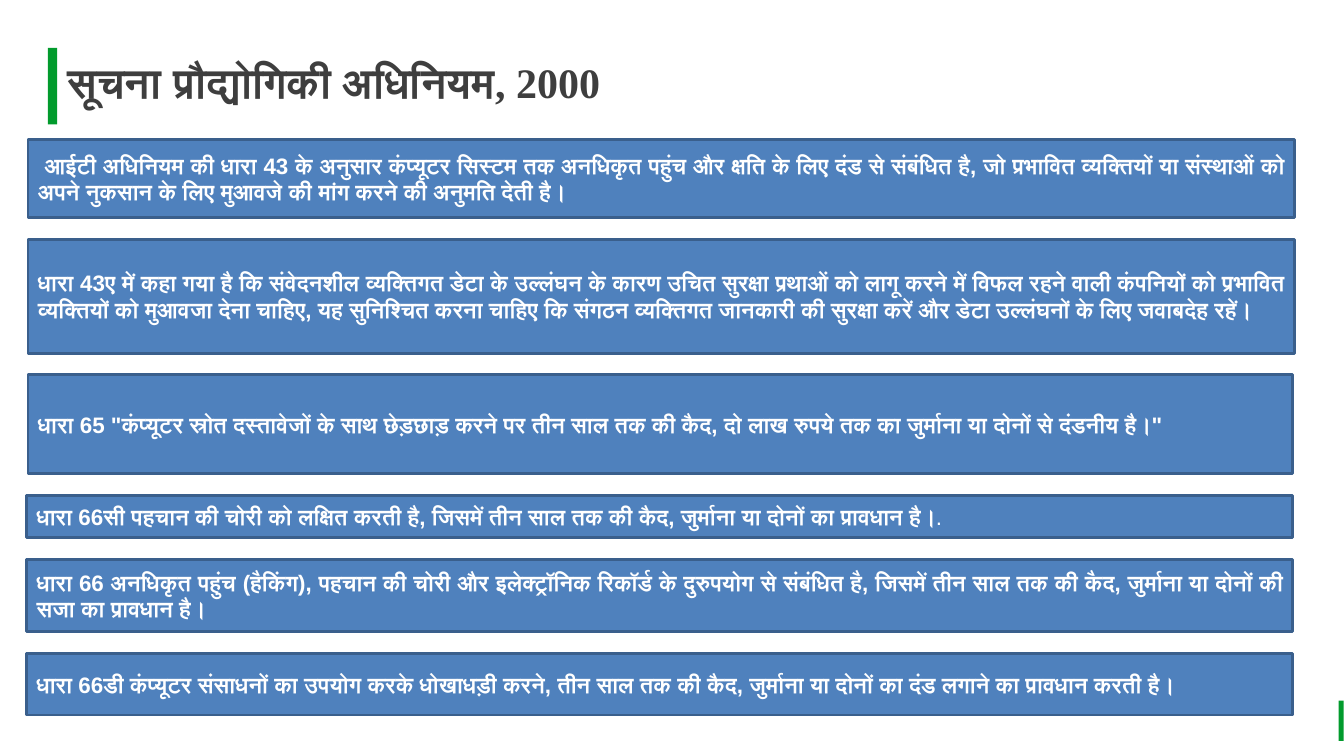
from dataclasses import dataclass

from pptx import Presentation
from pptx.dml.color import RGBColor
from pptx.enum import shapes, text
from pptx.util import Pt

TITLE = "सूचना प्रौद्योगिकी अधिनियम, 2000"

# Each section: left, width, height (points), then (text, bold) runs
SECTIONS = [
    (20, 904.5, 56.2, [(
        " आईटी अधिनियम की धारा 43 के अनुसार कंप्यूटर सिस्टम तक अनधिकृत पहुंच और क्षति के लिए दंड से "
        "संबंधित है, जो प्रभावित व्यक्तियों या संस्थाओं को अपने नुकसान के लिए मुआवजे की मांग करने की "
        "अनुमति देती है।", True)]),
    (20, 904.5, 81.4, [(
        "धारा 43ए में कहा गया है कि संवेदनशील व्यक्तिगत डेटा के उल्लंघन के कारण उचित सुरक्षा प्रथाओं को "
        "लागू करने में विफल रहने वाली कंपनियों को प्रभावित व्यक्तियों को मुआवजा देना चाहिए, यह "
        "सुनिश्चित करना चाहिए कि संगठन व्यक्तिगत जानकारी की सुरक्षा करें और डेटा उल्लंघनों के लिए "
        "जवाबदेह रहें।", True)]),
    (20, 903.5, 70.6, [(
        'धारा 65 "कंप्यूटर स्रोत दस्तावेजों के साथ छेड़छाड़ करने पर तीन साल तक की कैद, दो लाख रुपये तक '
        'का जुर्माना या दोनों से दंडनीय है।"', True)]),
    (19, 904.5, 30.2, [(
        "धारा 66सी पहचान की चोरी को लक्षित करती है, जिसमें तीन साल तक की कैद, जुर्माना या दोनों का "
        "प्रावधान है।", True), (".", False)]),
    (19, 904.5, 52, [(
        "धारा 66 अनधिकृत पहुंच (हैकिंग), पहचान की चोरी और इलेक्ट्रॉनिक रिकॉर्ड के दुरुपयोग से संबंधित है, "
        "जिसमें तीन साल तक की कैद, जुर्माना या दोनों की सजा का प्रावधान है।", True)]),
    (19, 904.5, 44, [(
        "धारा 66डी कंप्यूटर संसाधनों का उपयोग करके धोखाधड़ी करने, तीन साल तक की कैद, जुर्माना या दोनों "
        "का दंड लगाने का प्रावधान करती है।", True)]),
]
SECTIONS_TOP, SECTION_GAP = 99.4, 15.4

# Left, top, width, height of the green bars
ACCENT_BARS = [(956.2, 500.4, 3.6, 28.8), (34.2, 34.2, 6.7, 54.6)]


@dataclass(frozen=True)
class Theme:
    accent: RGBColor = RGBColor.from_string("029B2D")
    box: RGBColor = RGBColor.from_string("4F81BD")
    border: RGBColor = RGBColor.from_string("3A5F8C")
    heading: RGBColor = RGBColor.from_string("3E3E3E")
    body: RGBColor = RGBColor.from_string("FFFFFF")
    heading_font: str = "Times New Roman"
    body_font: str = "Arial"
    heading_size: Pt = Pt(30)
    body_size: Pt = Pt(16)
    border_width: Pt = Pt(2)


THEME = Theme()


def style_font(font, name, size, color):
    font.name, font.size = name, size
    font.color.rgb = color


def add_rectangle(slide, bounds, fill):
    shape = slide.shapes.add_shape(shapes.MSO_SHAPE.RECTANGLE, *map(Pt, bounds))
    shape.shadow.inherit = False
    shape.fill.solid()
    shape.fill.fore_color.rgb = fill
    shape.line.fill.background()
    return shape


def add_section(slide, bounds, runs):
    shape = add_rectangle(slide, bounds, THEME.box)
    shape.line.color.rgb = THEME.border
    shape.line.width = THEME.border_width
    frame = shape.text_frame
    frame.word_wrap = True
    frame.vertical_anchor = text.MSO_ANCHOR.MIDDLE
    paragraph = frame.paragraphs[0]
    paragraph.alignment = text.PP_ALIGN.JUSTIFY
    for content, bold in runs:
        run = paragraph.add_run()
        run.text = content
        style_font(run.font, THEME.body_font, THEME.body_size, THEME.body)
        run.font.bold = bold


def set_title(slide):
    title = slide.shapes.title
    title.left, title.top, title.width, title.height = map(Pt, (48.2, 40.3, 904.3, 36))
    frame = title.text_frame
    frame.margin_left = frame.margin_top = frame.margin_right = frame.margin_bottom = 0
    frame.word_wrap = True
    frame.auto_size = text.MSO_AUTO_SIZE.SHAPE_TO_FIT_TEXT
    frame.vertical_anchor = text.MSO_ANCHOR.TOP
    frame.text = TITLE
    paragraph = frame.paragraphs[0]
    paragraph.alignment = text.PP_ALIGN.LEFT
    style_font(paragraph.font, THEME.heading_font, THEME.heading_size, THEME.heading)
    paragraph.font.bold = True


def main():
    presentation = Presentation()
    presentation.slide_width, presentation.slide_height = Pt(960), Pt(540)
    slide = presentation.slides.add_slide(presentation.slide_layouts.get_by_name("Title Only"))
    for bounds in ACCENT_BARS:
        add_rectangle(slide, bounds, THEME.accent)
    set_title(slide)
    top = SECTIONS_TOP
    for left, width, height, runs in SECTIONS:
        add_section(slide, (left, top, width, height), runs)
        top += height + SECTION_GAP
    presentation.save("out.pptx")


if __name__ == "__main__":
    main()
